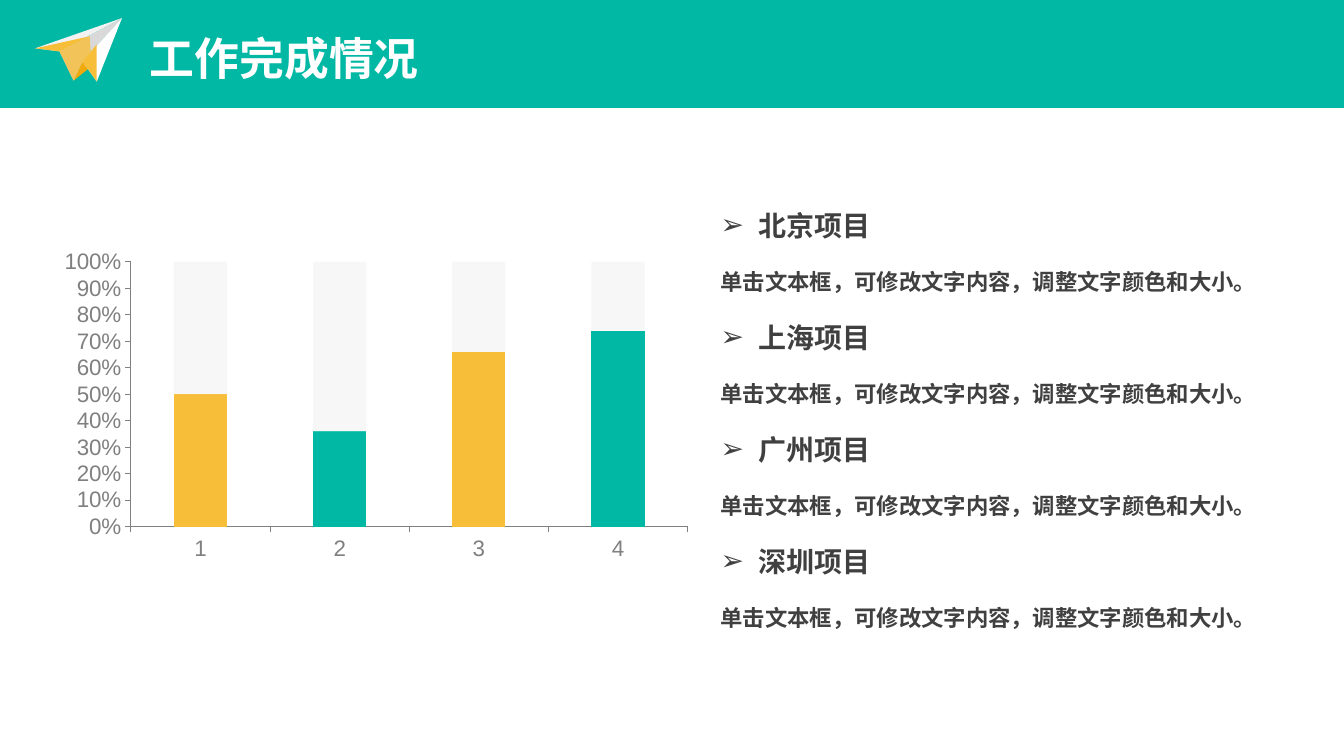
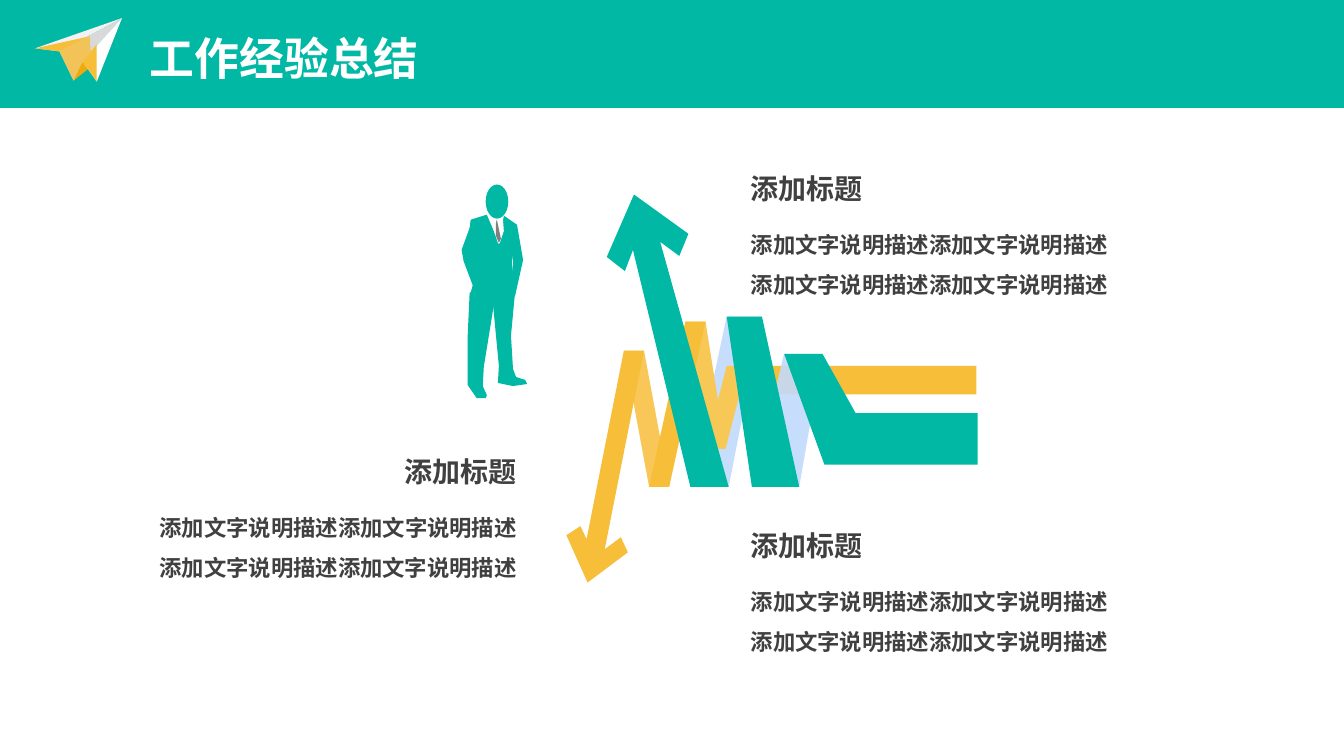
from dataclasses import dataclass
from typing import NamedTuple, Optional

from lxml import etree
from pptx import Presentation
from pptx.chart.data import CategoryChartData
from pptx.dml.color import RGBColor
from pptx.enum.chart import XL_CHART_TYPE as ChartType, XL_TICK_MARK as Tick
from pptx.enum.shapes import MSO_SHAPE as Shape
from pptx.enum.text import PP_ALIGN as Align
from pptx.oxml.ns import qn
from pptx.util import Cm, Pt

TEAL = RGBColor(0x01, 0xB8, 0xA5)
AMBER = RGBColor(0xF7, 0xBE, 0x3A)
LIGHT_AMBER = RGBColor(0xF8, 0xC8, 0x57)
PALE_AMBER = RGBColor(0xF1, 0xC3, 0x59)
DARK_AMBER = RGBColor(0xF0, 0xA9, 0x0A)
ICE_BLUE = RGBColor(0xC2, 0xDA, 0xFC)
WHITE = RGBColor(0xFF, 0xFF, 0xFF)
MIST = RGBColor(0xF2, 0xF2, 0xF2)
SILVER = RGBColor(0xD9, 0xD9, 0xD9)
GREY = RGBColor(0x80, 0x80, 0x80)
CHARCOAL = RGBColor(0x40, 0x40, 0x40)

FONT = "Arial"
GRID = Cm(2.54) / 100  # one unit of every outline point
BODY_DROP = 1.16  # from the top of a heading to the top of its body, cm


class Box(NamedTuple):
    """Left, top, width and height in cm."""
    left: float
    top: float
    width: float
    height: float

    def lengths(self) -> tuple[Cm, ...]:
        return tuple(Cm(value) for value in self)


class Point(NamedTuple):
    x: int
    y: int


class Fold(NamedTuple):
    """A level edge where a ribbon turns: its left end and its width."""
    x: int
    y: int
    width: int

    def left(self) -> Point:
        return Point(self.x, self.y)

    def right(self) -> Point:
        return Point(self.x + self.width, self.y)


class ArrowHead(NamedTuple):
    """Corners in order round the head, from one side of the neck."""
    neck_in: Point
    barb_in: Point
    wing_in: Point
    tip: Point
    wing_out: Point
    barb_out: Point
    neck_out: Point


@dataclass(frozen=True)
class Note:
    """A heading with body text below it; lengths in cm."""
    left: float
    top: float
    width: float
    heading: str
    body: str
    align: Align = Align.LEFT
    bullet: str = ""


CITIES = ("北京", "上海", "广州", "深圳")
PROJECT_TEXT = "单击文本框，可修改文字内容，调整文字颜色和大小。"
PROJECTS = tuple(
    Note(17.91, 5.13 + 2.82 * i, 14.2, f"{city}项目", PROJECT_TEXT, bullet="➢")
    for i, city in enumerate(CITIES))

LESSON_TEXT = "添加文字说明描述" * 4
LESSONS = tuple(
    Note(left, top, 9.75, "添加标题", LESSON_TEXT, align)
    for left, top, align in ((18.67, 4.2, Align.LEFT),
                             (3.53, 11.33, Align.RIGHT),
                             (18.67, 13.19, Align.LEFT)))

COMPLETED = (50, 36, 66, 74)
CHART = Box(0, 5.97, 17.35, 10.06)
PLOT = Box(3.3, 0.63, 14.03, 6.67)  # inside the chart


def set_alpha(fill, percent: int) -> None:
    color = fill._xPr.find(qn("a:solidFill"))[0]
    etree.SubElement(color, qn("a:alpha")).set("val", str(percent * 1000))


def paint(s, color: RGBColor, alpha: int = 100,
          line: Optional[RGBColor] = None) -> None:
    s.shadow.inherit = False
    s.fill.solid()
    s.fill.fore_color.rgb = color
    if alpha < 100:
        set_alpha(s.fill, alpha)
    if line is None:
        s.line.fill.background()
    else:
        s.line.color.rgb = line
        s.line.width = Pt(1.25)


def add_preset(shapes, preset: Shape, box: Box, color: RGBColor) -> None:
    paint(shapes.add_shape(preset, *box.lengths()), color)


def add_outline(shapes, points, color: RGBColor, alpha: int = 100,
                line: Optional[RGBColor] = None) -> None:
    start, *others = points
    builder = shapes.build_freeform(*start, scale=GRID)
    builder.add_line_segments(others, close=True)
    paint(builder.convert_to_shape(), color, alpha, line)


def add_strip(shapes, a: Fold, b: Fold, color: RGBColor,
              alpha: int = 100) -> None:
    """Draw the piece of ribbon between two folds."""
    add_outline(shapes, (a.left(), a.right(), b.right(), b.left()),
                color, alpha)


def add_arrow(shapes, foot: Fold, head: ArrowHead, color: RGBColor) -> None:
    add_outline(shapes, (foot.left(), *head, foot.right()), color)


def add_text(shapes, box: Box, text: str, size: int,
             color: RGBColor = CHARCOAL, align: Align = Align.LEFT,
             spacing: float = 1.0):
    """Add a one-paragraph text box and return the paragraph."""
    tf = shapes.add_textbox(*box.lengths()).text_frame
    tf.word_wrap = True
    p = tf.paragraphs[0]
    p.alignment = align
    p.line_spacing = spacing
    r = p.add_run()
    r.text = text
    r.font.name = FONT
    r.font.size = Pt(size)
    r.font.bold = True
    r.font.color.rgb = color
    return p


def add_bullet(p, char: str) -> None:
    pPr = p._p.get_or_add_pPr()
    pPr.set("marL", str(Cm(0.95)))
    pPr.set("indent", str(-Cm(0.95)))
    etree.SubElement(pPr, qn("a:buFont")).set("typeface", FONT)
    etree.SubElement(pPr, qn("a:buChar")).set("char", char)


def add_note(slide, note: Note) -> None:
    shapes = slide.shapes.add_group_shape().shapes
    add_text(shapes, Box(note.left, note.top + BODY_DROP, note.width, 1.18),
             note.body, 16, align=note.align, spacing=1.5)
    p = add_text(shapes, Box(note.left, note.top, note.width, 1.11),
                 note.heading, 20, align=note.align)
    if note.bullet:
        add_bullet(p, note.bullet)


def add_paper_plane(slide) -> None:
    nose, left_wing, right_wing = Point(121, 18), Point(35, 48), Point(96, 81)
    left_fold, right_fold = Point(59, 51), Point(82, 61)
    crease, keel, keel_edge = Point(89, 36), Point(73, 80), Point(88, 68)
    inner_edge, flap = Point(90, 52), Point(96, 44)
    shapes = slide.shapes.add_group_shape().shapes
    for color, facet in (
            (SILVER, (nose, left_fold, keel, right_fold)),
            (DARK_AMBER, (right_fold, keel, keel_edge)),
            (WHITE, (nose, right_fold, right_wing)),
            (MIST, (nose, left_wing, left_fold)),
            (AMBER, (left_fold, crease, left_wing)),
            (PALE_AMBER, (left_fold, crease, inner_edge, right_fold, keel)),
            (AMBER, (right_fold, flap, right_wing))):
        add_outline(shapes, facet, color)


def add_ribbons(shapes) -> None:
    """Draw two folded ribbons, each running from a tail to an arrowhead."""
    floor = 483
    amber_tail, amber_dip, amber_peak, amber_floor, amber_turn = (
        Fold(x, y, 20) for x, y in ((721, 363), (700, 445), (680, 319),
                                    (644, floor), (619, 348)))
    teal_bend, teal_floor, teal_peak, teal_foot = (
        Fold(778, 351, 38), Fold(746, floor, 47),
        Fold(721, 314, 35), Fold(685, floor, 38))
    amber_head = ArrowHead(
        neck_in=Point(582, 535), barb_in=Point(576, 522),
        wing_in=Point(562, 531), tip=Point(583, 578),
        wing_out=Point(623, 548), barb_out=Point(616, 533),
        neck_out=Point(600, 545))
    teal_head = ArrowHead(
        neck_in=Point(628, 248), barb_in=Point(620, 269),
        wing_in=Point(602, 255), tip=Point(629, 193),
        wing_out=Point(683, 232), barb_out=Point(674, 254),
        neck_out=Point(655, 240))
    tail_end, tail_top, tail_bottom = 970, 410, 461

    add_preset(shapes, Shape.RECTANGLE, Box(18.34, 9.22, 6.27, 0.72), AMBER)
    for a, b, color, alpha in (
            (teal_bend, teal_floor, ICE_BLUE, 90),
            (teal_peak, teal_foot, ICE_BLUE, 90),
            (amber_peak, amber_dip, LIGHT_AMBER, 100),
            (amber_turn, amber_floor, AMBER, 85),
            (amber_tail, amber_dip, LIGHT_AMBER, 100),
            (amber_peak, amber_floor, AMBER, 100)):
        add_strip(shapes, a, b, color, alpha)
    add_arrow(shapes, amber_turn, amber_head, AMBER)
    add_outline(shapes, (teal_bend.left(), teal_bend.right(),
                         (849, tail_top), (tail_end, tail_top),
                         (tail_end, tail_bottom), (818, tail_bottom)), TEAL)
    add_strip(shapes, teal_peak, teal_floor, TEAL)
    add_arrow(shapes, teal_foot, teal_head, TEAL)


def add_businessman(shapes) -> None:
    jacket = ((467, 218), (483, 213), (495, 241), (500, 214), (513, 223),
              (519, 258), (511, 294), (466, 294), (469, 283), (460, 259),
              (458, 248), (466, 226))
    left_leg = ((466, 290), (492, 290), (480, 364), (479, 383), (483, 392),
                (482, 395), (473, 395), (464, 382), (464, 333))
    right_leg = ((488, 290), (511, 290), (507, 333), (509, 366), (512, 374),
                 (521, 377), (523, 381), (509, 383), (494, 380), (495, 363))
    sleeve_gap = ((508, 254), (509, 260), (508, 269))
    collar, chest = Point(493, 218), Point(495, 241)
    shirt = ((485, 211), chest, (499, 229), (498, 215), collar)
    tie = (collar, (497, 237), chest, (492, 234), (492, 221))

    for part in (jacket, left_leg, right_leg):
        add_outline(shapes, part, TEAL)
    add_outline(shapes, sleeve_gap, WHITE)
    add_outline(shapes, shirt, WHITE, line=WHITE)
    add_outline(shapes, tie, GREY)
    add_preset(shapes, Shape.OVAL, Box(12.24, 4.65, 0.57, 0.86), TEAL)


def place_plot(chart, plot: Box, frame: Box) -> None:
    """Fix the inner plot area of a chart that fills the frame."""
    plot_area = chart._chartSpace.chart.plotArea
    for old in plot_area.findall(qn("c:layout")):
        plot_area.remove(old)
    layout = etree.Element(qn("c:layout"))
    manual = etree.SubElement(layout, qn("c:manualLayout"))
    for tag, value in (("layoutTarget", "inner"),
                       ("xMode", "edge"), ("yMode", "edge"),
                       ("x", plot.left / frame.width),
                       ("y", plot.top / frame.height),
                       ("w", plot.width / frame.width),
                       ("h", plot.height / frame.height)):
        etree.SubElement(manual, qn(f"c:{tag}")).set("val", str(value))
    plot_area.insert(0, layout)


def add_progress_chart(slide) -> None:
    data = CategoryChartData()
    data.categories = [str(i + 1) for i in range(len(COMPLETED))]
    data.add_series("Series 1", COMPLETED)
    data.add_series("Series 2", [100 - done for done in COMPLETED])
    chart = slide.shapes.add_chart(
        ChartType.COLUMN_STACKED_100, *CHART.lengths(), data).chart
    chart.has_legend = chart.has_title = False
    chart.font.name = FONT
    chart.font.size = Pt(16)
    chart.font.color.rgb = GREY
    place_plot(chart, PLOT, CHART)

    values = chart.value_axis
    for axis in (chart.category_axis, values):
        axis.has_major_gridlines = False
        axis.major_tick_mark = Tick.OUTSIDE
        axis.minor_tick_mark = Tick.NONE
        axis.format.line.color.rgb = GREY
    values.minimum_scale, values.maximum_scale, values.major_unit = 0, 1, 0.1
    values.tick_labels.number_format = "0%"
    values.tick_labels.number_format_is_linked = False

    plot = chart.plots[0]
    plot.vary_by_categories = False
    plot.gap_width = 161
    plot.overlap = 100
    done, rest = plot.series
    for i in range(len(COMPLETED)):
        fill = done.points[i].format.fill
        fill.solid()
        fill.fore_color.rgb = (AMBER, TEAL)[i % 2]
    rest.format.fill.solid()
    rest.format.fill.fore_color.rgb = MIST
    set_alpha(rest.format.fill, 58)


def add_slide(prs, title: str, notes: tuple[Note, ...]):
    """Add a blank slide with the shared band, paper plane, title and notes."""
    slide = prs.slides.add_slide(prs.slide_layouts[6])
    add_preset(slide.shapes, Shape.RECTANGLE, Box(0, 0, 33.87, 2.72), TEAL)
    add_paper_plane(slide)
    add_text(slide.shapes, Box(3.53, 0.66, 12, 1.63), title, 32, WHITE)
    for note in notes:
        add_note(slide, note)
    return slide


def main() -> None:
    prs = Presentation()
    prs.slide_width, prs.slide_height = Cm(33.87), Cm(19.05)
    add_progress_chart(add_slide(prs, "工作完成情况", PROJECTS))
    experience = add_slide(prs, "工作经验总结", LESSONS)
    for draw in (add_ribbons, add_businessman):
        draw(experience.shapes.add_group_shape().shapes)
    prs.save("out.pptx")


if __name__ == "__main__":
    main()
